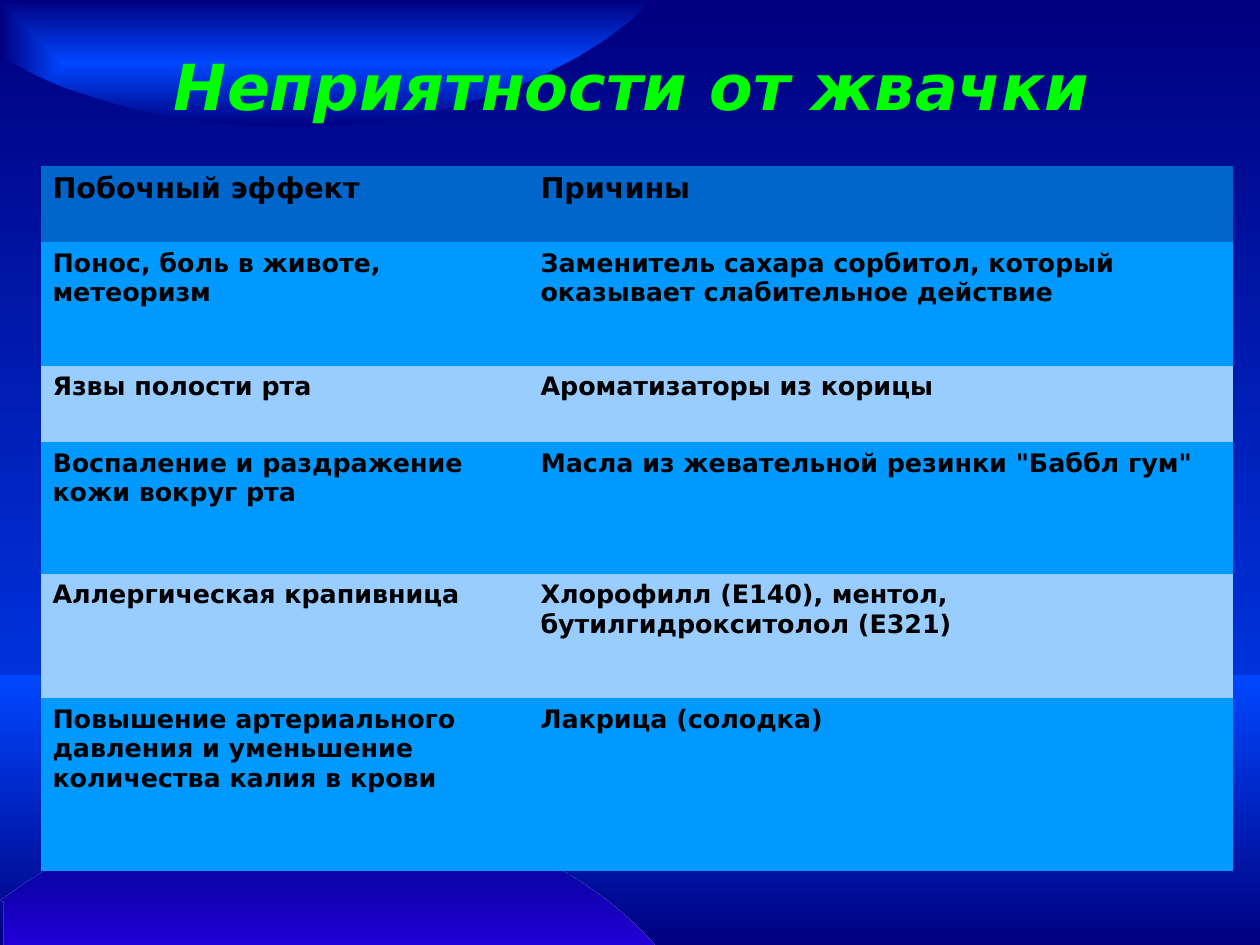
from lxml.etree import SubElement
from pptx import Presentation
from pptx.dml.color import RGBColor
from pptx.enum.shapes import MSO_SHAPE
from pptx.enum.text import MSO_ANCHOR, MSO_AUTO_SIZE, PP_ALIGN
from pptx.oxml import parse_xml
from pptx.oxml.ns import nsdecls, qn
from pptx.util import Inches, Pt

SLIDE_WIDTH, SLIDE_HEIGHT = 28 / 2.54, 21 / 2.54
FONT = "DejaVu Sans"
COLORS = {
    "bright": "0047FF",
    "navy": "000080",
    "violet": "2300DC",
    "title": "00FF00",
    "text": "000000",
    "border": "FFFFFF",
    "header": "0066CC",
    "odd": "0099FF",
    "even": "99CCFF",
}
COL_WIDTHS = [4.27, 6.16]
ROW_HEIGHTS = [0.67, 1.08, 0.67, 1.15, 1.09, 1.51]
ROWS = [
    ("Побочный эффект", "Причины"),
    ("Понос, боль в животе, метеоризм",
     "Заменитель сахара сорбитол, который оказывает слабительное действие"),
    ("Язвы полости рта", "Ароматизаторы из корицы"),
    ("Воспаление и раздражение кожи вокруг рта",
     "Масла из жевательной резинки \"Баббл гум\""),
    ("Аллергическая крапивница",
     "Хлорофилл (Е140), ментол, бутилгидрокситолол (Е321)"),
    ("Повышение артериального давления и уменьшение количества калия в крови",
     "Лакрица (солодка)"),
]
TOP_ARC = [(0, 0.49), (0.28, 0.64), (0.55, 0.76), (0.85, 0.86), (1.16, 0.95),
           (1.48, 1.02), (1.82, 1.07), (2.17, 1.1), (2.53, 1.11)]
BOTTOM_ARC = [(0, 7.88), (0.23, 7.72), (0.48, 7.57), (0.75, 7.44), (1.03, 7.33),
              (1.33, 7.24), (1.65, 7.16), (1.97, 7.11), (2.31, 7.07), (2.66, 7.06)]


def rgb(name):
    """Return the named colour."""
    return RGBColor.from_string(COLORS[name])


def set_gradient(fill, start, end, angle):
    """Fill with a linear gradient, the angle counted counter-clockwise."""
    fill.gradient()
    fill.gradient_angle = angle
    for stop, name, position in zip(fill.gradient_stops, (start, end), (0, 1)):
        stop.color.rgb = rgb(name)
        stop.position = position


def finish_shape(sp, start, end, angle):
    """Give a background shape its gradient and no line or shadow."""
    set_gradient(sp.fill, start, end, angle)
    sp.line.fill.background()
    sp.shadow.inherit = False
    return sp


def add_outline(s, points):
    """Add a closed outline through points given in inches."""
    start, *rest = [(Inches(x), Inches(y)) for x, y in points]
    builder = s.shapes.build_freeform(*start)
    builder.add_line_segments(rest, close=True)
    return builder.convert_to_shape()


def mirror(arc):
    """Complete half an arc with its mirror image."""
    middle = arc[-1][0]
    return arc + [(2 * middle - x, y) for x, y in reversed(arc[:-1])]


def add_text(tf, text, *, size, color, italic=False, align=PP_ALIGN.LEFT, spacing=1.02):
    """Write one formatted bold paragraph into a text frame."""
    p = tf.paragraphs[0]
    p.alignment = align
    p.line_spacing = spacing
    r = p.add_run()
    r.text = text
    r.font.name = FONT
    r.font.size = Pt(size)
    r.font.bold = True
    r.font.italic = italic
    r.font.color.rgb = rgb(color)


def add_backdrop(s):
    """Draw the gradient background with its two arcs and lower band."""
    set_gradient(s.background.fill, "bright", "navy", 90)

    points = [(0, 0)] + mirror(TOP_ARC) + [(5.27, 0.36), (5.49, 0.2), (5.68, 0.03), (5.71, 0)]
    sp = finish_shape(add_outline(s, points), "bright", "navy", 0)
    lin = next(sp._element.iter(qn("a:lin")))
    lin.getparent().replace(lin, parse_xml(
        f'<a:path {nsdecls("a")} path="rect">'
        '<a:fillToRect l="50000" t="50000" r="50000" b="50000"/></a:path>'))

    band_top = SLIDE_HEIGHT * 5 / 7
    band = s.shapes.add_shape(MSO_SHAPE.ROUNDED_RECTANGLE, 0, Inches(band_top),
                              Inches(SLIDE_WIDTH), Inches(SLIDE_HEIGHT - band_top))
    band.adjustments[0] = 0
    finish_shape(band, "bright", "navy", 270)

    points = [(0.04, SLIDE_HEIGHT), (0.04, 7.89)] + mirror(BOTTOM_ARC)
    points += [(5.52, 8.05), (5.7, 8.23), (5.73, SLIDE_HEIGHT)]
    sp = finish_shape(add_outline(s, points), "violet", "navy", 90)
    end_color = list(sp._element.iter(qn("a:srgbClr")))[1]
    SubElement(end_color, qn("a:alpha"), val="50000")


def add_title(s, text):
    """Place the title in front of the backdrop."""
    sp = s.shapes.title
    s.shapes._spTree.append(sp._element)
    sp.left, sp.top, sp.width, sp.height = [Inches(v) for v in (0.82, 0.1, 9.41, 1.28)]
    tf = sp.text_frame
    tf.margin_left = tf.margin_right = tf.margin_top = tf.margin_bottom = 0
    tf.vertical_anchor = MSO_ANCHOR.MIDDLE
    tf.word_wrap = True
    tf.auto_size = MSO_AUTO_SIZE.NONE
    add_text(tf, text, size=40, color="title", italic=True,
             align=PP_ALIGN.CENTER, spacing=1.01)


def set_borders(cell):
    """Give a cell hairline borders, placed before its fill."""
    tc_pr = cell._tc.get_or_add_tcPr()
    for i, side in enumerate(("lnL", "lnR", "lnT", "lnB")):
        tc_pr.insert(i, parse_xml(
            f'<a:{side} {nsdecls("a")} w="{Pt(0.03)}"><a:solidFill>'
            f'<a:srgbClr val="{COLORS["border"]}"/></a:solidFill></a:{side}>'))


def add_effects_table(s):
    """Add the table of side effects and their causes."""
    frame = s.shapes.add_table(len(ROWS), len(COL_WIDTHS), Inches(0.36), Inches(1.45),
                               Inches(sum(COL_WIDTHS)), Inches(sum(ROW_HEIGHTS)))
    table = frame.table
    table.first_row = table.horz_banding = False
    for column, width in zip(table.columns, COL_WIDTHS):
        column.width = Inches(width)
    for i, (texts, height) in enumerate(zip(ROWS, ROW_HEIGHTS)):
        table.rows[i].height = Inches(height)
        fill = "header" if i == 0 else "odd" if i % 2 else "even"
        for j, text in enumerate(texts):
            cell = table.cell(i, j)
            cell.fill.solid()
            cell.fill.fore_color.rgb = rgb(fill)
            set_borders(cell)
            add_text(cell.text_frame, text, size=16 if i else 18, color="text")


def main():
    """Build the slide and save it."""
    prs = Presentation()
    prs.slide_width, prs.slide_height = Inches(SLIDE_WIDTH), Inches(SLIDE_HEIGHT)
    s = prs.slides.add_slide(prs.slide_layouts[5])
    add_backdrop(s)
    add_title(s, "Неприятности от жвачки")
    add_effects_table(s)
    prs.save("out.pptx")


if __name__ == "__main__":
    main()
